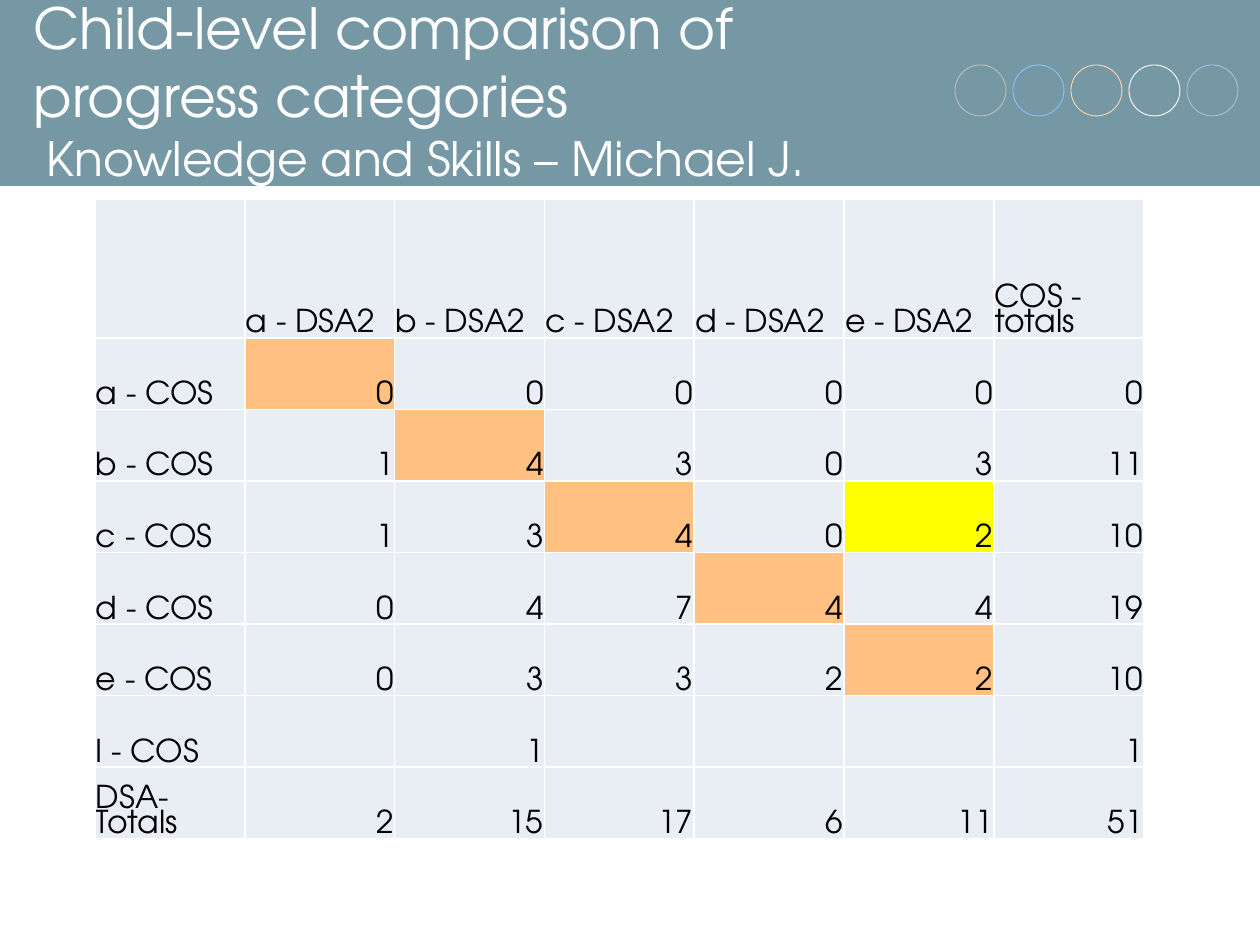
from pptx import Presentation
from pptx.dml.color import RGBColor
from pptx.enum.shapes import MSO_SHAPE as Shape
from pptx.enum.text import MSO_ANCHOR as Anchor, MSO_AUTO_SIZE as AutoSize, PP_ALIGN as Align
from pptx.oxml import parse_xml
from pptx.oxml.ns import nsdecls
from pptx.util import Emu, Pt

SCALE = 914400 / 126
FONT = "TeX Gyre Adventor"
WHITE, BLACK = "FFFFFF", "000000"
BAND, CELL, MATCH, NOTABLE = "7698A4", "E9EDF4", "FFC081", "FFFF00"
CIRCLES = ["BFBFBF", "8DC0FD", "FFD7AF", "FFFFFF", "ADBEE6"]
COMPARISON = [
    ["", "a - DSA2", "b - DSA2", "c - DSA2", "d - DSA2", "e - DSA2", "COS - totals"],
    ["a - COS", 0, 0, 0, 0, 0, 0],
    ["b - COS", 1, 4, 3, 0, 3, 11],
    ["c - COS", 1, 3, 4, 0, 2, 10],
    ["d - COS", 0, 4, 7, 4, 4, 19],
    ["e - COS", 0, 3, 3, 2, 2, 10],
    ["I - COS", "", 1, "", "", "", 1],
    ["DSA-Totals", 2, 15, 17, 6, 11, 51],
]


def px(length):
    return Emu(round(length * SCALE))


def rgb(value):
    return RGBColor.from_string(value)


def write(paragraph, text, size=18, color=BLACK, align=Align.LEFT, spacing=1.0):
    paragraph.alignment = align
    paragraph.line_spacing = spacing
    run = paragraph.add_run()
    run.text = text
    run.font.name = FONT
    run.font.size = Pt(size)
    run.font.bold = False
    run.font.color.rgb = rgb(color)


class Deck:
    def __init__(self, width, height):
        self.show = Presentation()
        self.show.slide_width, self.show.slide_height = px(width), px(height)
        self.slide = self.show.slides.add_slide(self.show.slide_layouts[5])

    def shape(self, kind, left, top, width, height, fill=None, line=None):
        figure = self.slide.shapes.add_shape(kind, px(left), px(top), px(width), px(height))
        figure.shadow.inherit = False
        if fill:
            figure.fill.solid()
            figure.fill.fore_color.rgb = rgb(fill)
        else:
            figure.fill.background()
        if line:
            figure.line.color.rgb = rgb(line)
            figure.line.width = Pt(0.5)
        else:
            figure.line.fill.background()

    def title(self, heading, subheading, left, top, width, height):
        title = self.slide.shapes.title
        self.slide.shapes._spTree.append(title._element)
        title.left, title.top = px(left), px(top)
        title.width, title.height = px(width), px(height)
        frame = title.text_frame
        frame.word_wrap = True
        frame.auto_size = AutoSize.NONE
        frame.vertical_anchor = Anchor.MIDDLE
        paragraph = frame.paragraphs[0]
        write(paragraph, heading, size=32.4, color=WHITE)
        paragraph.add_line_break()
        write(paragraph, subheading, size=27, color=WHITE)

    def table(self, rows, highlights, left, top, width, height, header):
        table = self.slide.shapes.add_table(
            len(rows), len(rows[0]), px(left), px(top), px(width), px(height)).table
        table.first_row = table.horz_banding = False
        for column in table.columns:
            column.width = px(width / len(rows[0]))
        for r, values in enumerate(rows):
            table.rows[r].height = px((height - header) / (len(rows) - 1) if r else header)
            for c, value in enumerate(values):
                self.cell(table.cell(r, c), value, highlights.get((r, c), CELL))

    def cell(self, cell, value, fill):
        cell.margin_left = cell.margin_right = cell.margin_top = px(1)
        cell.margin_bottom = 0
        cell.vertical_anchor = Anchor.BOTTOM
        cell.fill.solid()
        cell.fill.fore_color.rgb = rgb(fill)
        properties = cell._tc.get_or_add_tcPr()
        for position, side in enumerate("LRTB"):
            properties.insert(position, parse_xml(
                f'<a:ln{side} {nsdecls("a")} w="{Pt(1)}"><a:solidFill>'
                f'<a:srgbClr val="{WHITE}"/></a:solidFill></a:ln{side}>'))
        if value != "":
            align = Align.RIGHT if isinstance(value, int) else Align.LEFT
            write(cell.text_frame.paragraphs[0], str(value), align=align, spacing=0.87)


def main():
    deck = Deck(1260, 945)
    deck.shape(Shape.RECTANGLE, 0, -3, 1260, 189, fill=BAND)
    for i, color in enumerate(CIRCLES):
        deck.shape(Shape.OVAL, 955 + 58 * i, 65, 51, 51, line=color)
    deck.title("Child-level comparison of progress categories",
               " Knowledge and Skills – Michael J.", 21, 11, 924, 157)
    highlights = {(i, i): MATCH for i in range(1, 6)}
    highlights[3, 5] = NOTABLE
    deck.table(COMPARISON, highlights, 95, 199, 1049, 640, header=139)
    deck.show.save("out.pptx")


if __name__ == "__main__":
    main()
